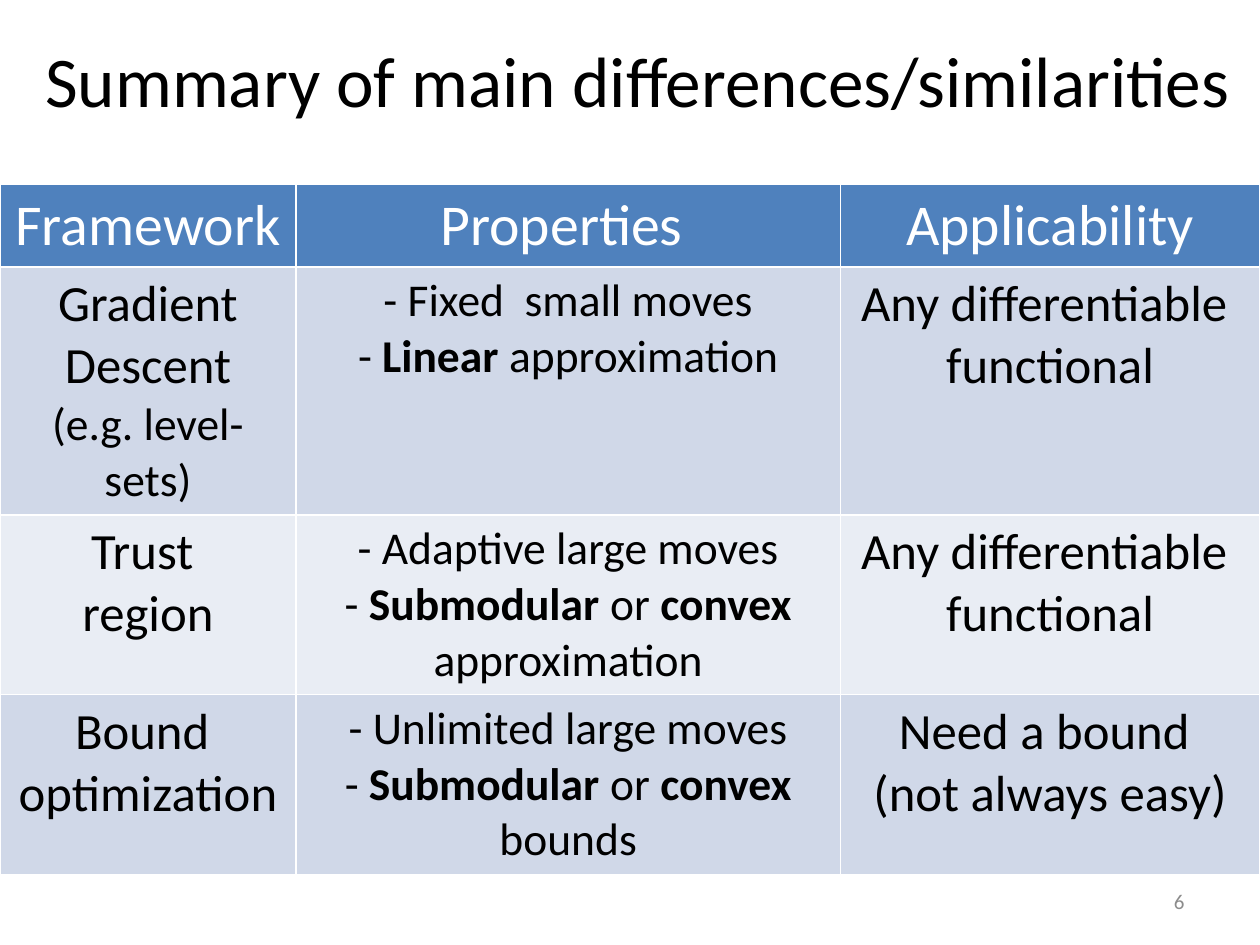
"""Build the summary slide comparing three optimization frameworks."""
from dataclasses import dataclass

from pptx import Presentation
from pptx.dml.color import RGBColor
from pptx.enum.text import MSO_ANCHOR, MSO_AUTO_SIZE, PP_ALIGN
from pptx.util import Inches, Pt

CENTER, RIGHT = PP_ALIGN.CENTER, PP_ALIGN.RIGHT
TOP, MIDDLE = MSO_ANCHOR.TOP, MSO_ANCHOR.MIDDLE
NO_FIT = MSO_AUTO_SIZE.NONE

BLACK = RGBColor(0x00, 0x00, 0x00)
WHITE = RGBColor(0xFF, 0xFF, 0xFF)
GRAY = RGBColor(0x8C, 0x8C, 0x8C)
HEADER_BLUE = RGBColor(0x4F, 0x81, 0xBD)
BANDS = (RGBColor(0xE9, 0xED, 0xF4), RGBColor(0xD0, 0xD8, 0xE8))

FONT = "Calibri"
HEADER, LARGE, SMALL = 33, 29, 26
COL_WIDTHS = (2.35, 4.32, 3.33)
ROW_HEIGHTS = (0.64, 1.92, 1.39, 1.39)


@dataclass
class Line:
    """A paragraph whose bold parts stand between asterisks."""
    text: str
    size: float = LARGE
    color: RGBColor = BLACK
    align: PP_ALIGN = CENTER


def header(text: str) -> list[Line]:
    """Return the content of a header cell."""
    return [Line(text, HEADER, WHITE)]


def large(*texts: str) -> list[Line]:
    """Return large lines."""
    return [Line(t) for t in texts]


def small(*texts: str) -> list[Line]:
    """Return small lines."""
    return [Line(t, SMALL) for t in texts]


ROWS = [
    [header("Framework"), header("Properties "), header("Applicability")],
    [large("Gradient", "Descent") + small("(e.g. level-sets)"),
     small("- Fixed  small moves", "-* Linear *approximation"),
     large("Any differentiable  functional")],
    [large("Trust ", "region"),
     small("- Adaptive large moves",
           "-* Submodular* or *convex *approximation"),
     large("Any differentiable ", "functional")],
    [large("Bound ", "optimization"),
     small("- Unlimited large moves",
           "-* Submodular *or *convex* bounds"),
     large("Need a bound ", "(not always easy)")],
]


def write(tf, lines: list[Line]) -> None:
    """Fill a text frame with formatted lines."""
    for i, line in enumerate(lines):
        p = tf.add_paragraph() if i else tf.paragraphs[0]
        p.alignment = line.align
        p.font.name = FONT
        p.font.size = Pt(line.size)
        p.font.color.rgb = line.color
        for j, part in enumerate(line.text.split("*")):
            r = p.add_run()
            r.text = part
            r.font.bold = j % 2 == 1


def place(sp, left: float, top: float, width: float, height: float) -> None:
    """Move and size a shape, in inches."""
    sp.left, sp.top = Inches(left), Inches(top)
    sp.width, sp.height = Inches(width), Inches(height)


def add_summary(s) -> None:
    """Add the comparison table."""
    tbl = s.shapes.add_table(
        len(ROWS), len(COL_WIDTHS), Inches(0), Inches(1.46),
        Inches(sum(COL_WIDTHS)), Inches(sum(ROW_HEIGHTS))).table
    for col, width in zip(tbl.columns, COL_WIDTHS):
        col.width = Inches(width)
    for i, (row, height) in enumerate(zip(ROWS, ROW_HEIGHTS)):
        tbl.rows[i].height = Inches(height)
        for j, lines in enumerate(row):
            cell = tbl.cell(i, j)
            cell.margin_left = cell.margin_right = Inches(0.09)
            cell.fill.solid()
            cell.fill.fore_color.rgb = BANDS[i % 2] if i else HEADER_BLUE
            write(cell.text_frame, lines)


def main() -> None:
    """Create and save the presentation."""
    prs = Presentation()
    prs.slide_width, prs.slide_height = Inches(10), Inches(7.5)
    s = prs.slides.add_slide(prs.slide_layouts[5])

    title = s.shapes.title
    place(title, 0.11, 0.24, 9.9, 1.37)
    tf = title.text_frame
    tf.auto_size = NO_FIT
    tf.vertical_anchor = TOP
    write(tf, [Line("Summary of main differences/similarities", 40.7)])

    add_summary(s)

    number = s.shapes.add_textbox(
        Inches(7.17), Inches(6.95), Inches(2.33), Inches(0.4))
    tf = number.text_frame
    tf.word_wrap = True
    tf.vertical_anchor = MIDDLE
    write(tf, [Line("6", 12, GRAY, RIGHT)])

    prs.save("out.pptx")


if __name__ == "__main__":
    main()
